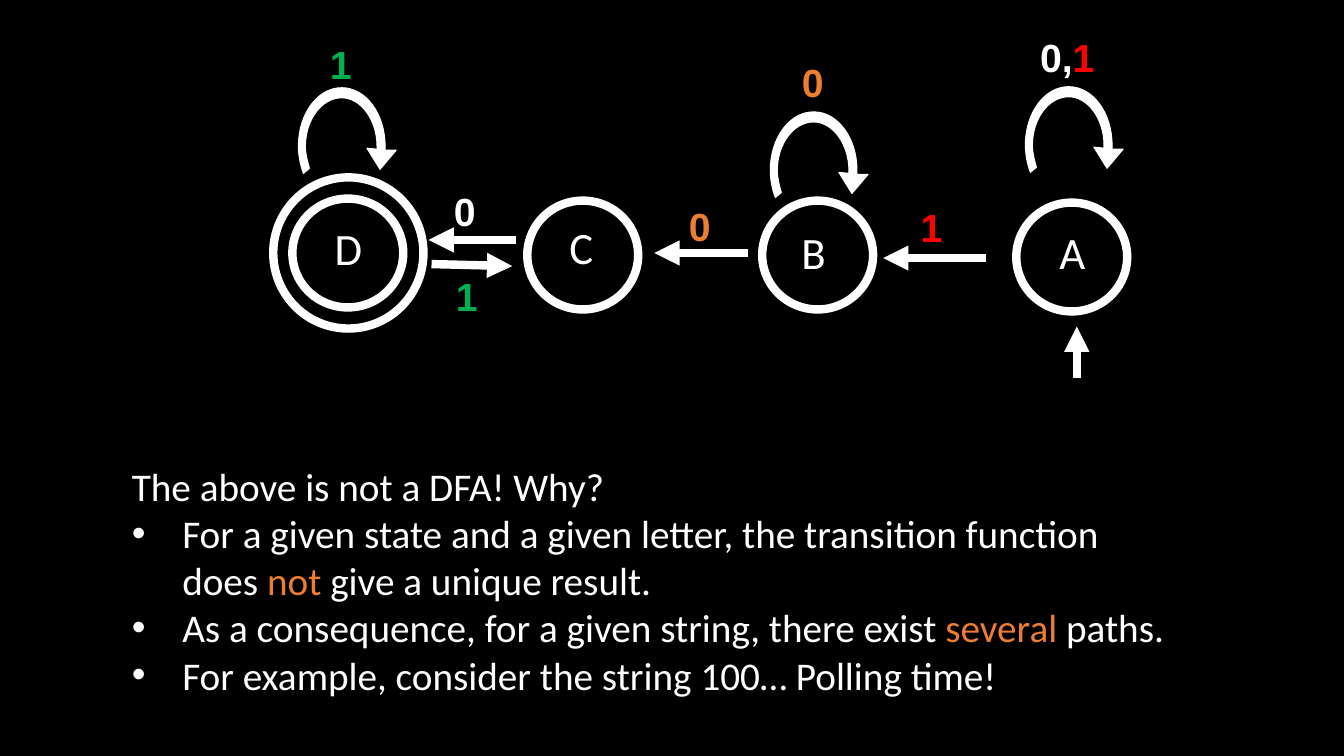
"""Build a slide with a four-state automaton and the reason it is not a DFA."""
from lxml import etree
from pptx import Presentation
from pptx import util as u
from pptx.dml.color import RGBColor
from pptx.enum import shapes, text
from pptx.oxml.ns import qn

WHITE, BLACK, GREEN, ORANGE, RED = "FFFFFF", "000000", "00B050", "ED7D31", "FF0000"


def paint(target, color):
    target.solid()
    target.fore_color.rgb = RGBColor.from_string(color)


def add_text(box, paragraphs, size, font, bold=False, align=text.PP_ALIGN.LEFT, wrap=False):
    shape = slide.shapes.add_textbox(*[u.Inches(value) for value in box])
    frame = shape.text_frame
    frame.word_wrap = wrap
    frame.auto_size = text.MSO_AUTO_SIZE.SHAPE_TO_FIT_TEXT
    for index, parts in enumerate(paragraphs):
        paragraph = frame.add_paragraph() if index else frame.paragraphs[0]
        paragraph.alignment = align
        for words, color in parts:
            if words == "\v":
                paragraph.add_line_break()
                continue
            run = paragraph.add_run()
            run.text = words
            run.font.size = u.Pt(size)
            run.font.name = font
            run.font.bold = bold
            paint(run.font.fill, color)
    return frame


presentation = Presentation()
presentation.slide_width = u.Inches(13.33)
presentation.slide_height = u.Inches(7.5)
slide = presentation.slides.add_slide(presentation.slide_layouts[6])
paint(slide.background.fill, BLACK)

state_circles = [
    (2.71, 1.76, 1.49, 1.5),
    (2.9, 1.97, 1.1, 1.08),
    (5.23, 1.99, 1.1, 1.08),
    (7.56, 1.99, 1.1, 1.08),
    (10.08, 2.01, 1.1, 1.08),
]
for box in state_circles:
    circle = slide.shapes.add_shape(shapes.MSO_SHAPE.OVAL, *[u.Inches(value) for value in box])
    circle.shadow.inherit = False
    circle.fill.background()
    paint(circle.line.fill, WHITE)
    circle.line.width = u.Pt(6)

loop_start = [(0.35, 0.03)]
inner_curves = [
    (0.35, 0.02), (0.35, 0.01), (0.35, 0),
    (0.35, -0.26), (0.19, -0.48), (0, -0.48),
    (-0.2, -0.48), (-0.36, -0.26), (-0.36, 0),
    (-0.36, 0.08), (-0.34, 0.15), (-0.32, 0.22),
]
loop_tail = [(-0.38, 0.27)]
outer_curves = [
    (-0.41, 0.19), (-0.43, 0.09), (-0.43, 0),
    (-0.43, -0.32), (-0.24, -0.58), (0, -0.58),
    (0.24, -0.58), (0.43, -0.32), (0.43, 0),
    (0.43, 0.01), (0.43, 0.02), (0.43, 0.04),
]
arrow_tip = [(0.54, 0.04), (0.38, 0.23), (0.25, 0.02)]
outline = loop_start + inner_curves + loop_tail + outer_curves + arrow_tip
outer_offset = len(inner_curves) + len(loop_tail)
curve_starts = [*range(0, len(inner_curves), 3),
                *range(outer_offset, outer_offset + len(outer_curves), 3)]
for center_x, center_y in [(3.39, 1.45), (8.07, 1.69), (10.6, 1.44)]:
    points = [(u.Inches(center_x + x), u.Inches(center_y + y)) for x, y in outline]
    builder = slide.shapes.build_freeform(*points[0])
    builder.add_line_segments(points[1:], close=True)
    loop = builder.convert_to_shape()
    segments = list(loop._element.iter(qn("a:lnTo")))
    for start in curve_starts:
        curve = etree.Element(qn("a:cubicBezTo"))
        segments[start].addprevious(curve)
        for segment in segments[start:start + 3]:
            curve.append(segment[0])
            segment.getparent().remove(segment)
    loop.shadow.inherit = False
    paint(loop.fill, WHITE)
    paint(loop.line.fill, WHITE)
    loop.line.width = u.Pt(0.75)

transition_arrows = [
    (9.78, 2.56, 8.76, 2.56),
    (7.42, 2.51, 6.49, 2.51),
    (5.12, 2.38, 4.25, 2.38),
    (4.28, 2.62, 5.08, 2.64),
    (10.68, 3.75, 10.68, 3.24),
]
for ends in transition_arrows:
    arrow = slide.shapes.add_connector(
        shapes.MSO_CONNECTOR.STRAIGHT, *[u.Inches(value) for value in ends])
    paint(arrow.line.fill, WHITE)
    arrow.line.width = u.Pt(6)
    properties = arrow._element.spPr
    etree.SubElement(properties.find(qn("a:ln")), qn("a:tailEnd"), type="triangle")
    etree.SubElement(properties, qn("a:effectLst"))

transition_labels = [
    (3.17, 0.35, 0.42, [("1", GREEN)]),
    (7.85, 0.53, 0.42, [("0", ORANGE)]),
    (10.21, 0.28, 0.75, [("0,", WHITE), ("1", RED)]),
    (4.4, 1.81, 0.42, [("0", WHITE)]),
    (4.42, 2.65, 0.42, [("1", GREEN)]),
    (6.73, 1.96, 0.42, [("0", ORANGE)]),
    (9.03, 1.97, 0.42, [("1", RED)]),
]
for left, top, width, parts in transition_labels:
    add_text((left, top, width, 0.57), [parts], 28, "Arial", True, text.PP_ALIGN.CENTER)

state_names = [
    ("A", 10.41, 2.18, 0.46),
    ("B", 7.85, 2.18, 0.46),
    ("C", 5.55, 2.13, 0.44),
    ("D", 3.22, 2.14, 0.48),
]
for name, left, top, width in state_names:
    add_text((left, top, width, 0.64), [[(name, WHITE)]], 32, "Calibri")

explanation = add_text((1.21, 4.54, 10.93, 2.46), [
    [("The above is not a DFA! Why?", WHITE)],
    [("For a given state and a given letter, the transition function ", WHITE), ("\v", WHITE),
     ("does ", WHITE), ("not", ORANGE), (" give a unique result.", WHITE)],
    [("As a consequence, for a given string, there exist ", WHITE), ("several", ORANGE),
     (" paths.", WHITE)],
    [("For example, consider the string 100… Polling time!", WHITE)],
], 28, "Calibri", wrap=True)
for paragraph in explanation.paragraphs[1:]:
    properties = paragraph._p.get_or_add_pPr()
    properties.set("marL", str(u.Inches(0.5)))
    properties.set("indent", str(u.Inches(-0.5)))
    etree.SubElement(properties, qn("a:buFont"), typeface="Arial")
    etree.SubElement(properties, qn("a:buChar"), char="•")

presentation.save("out.pptx")
